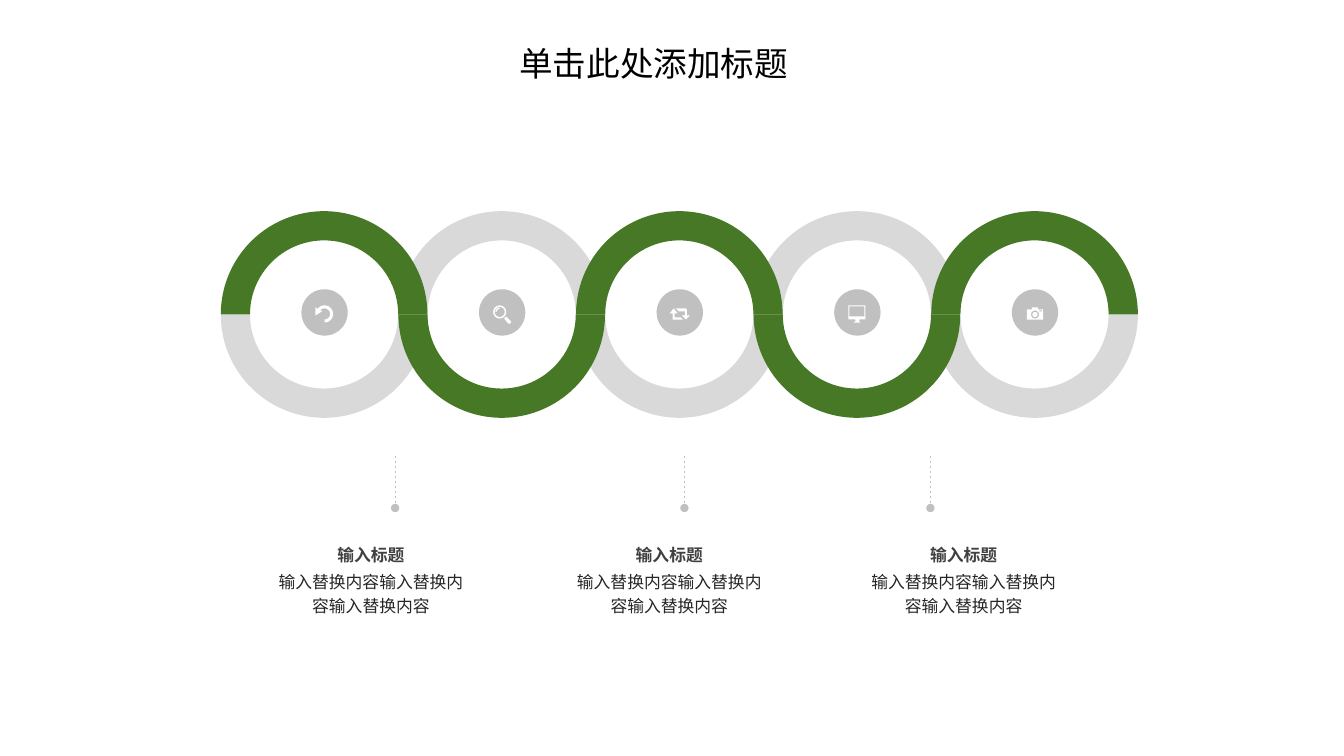
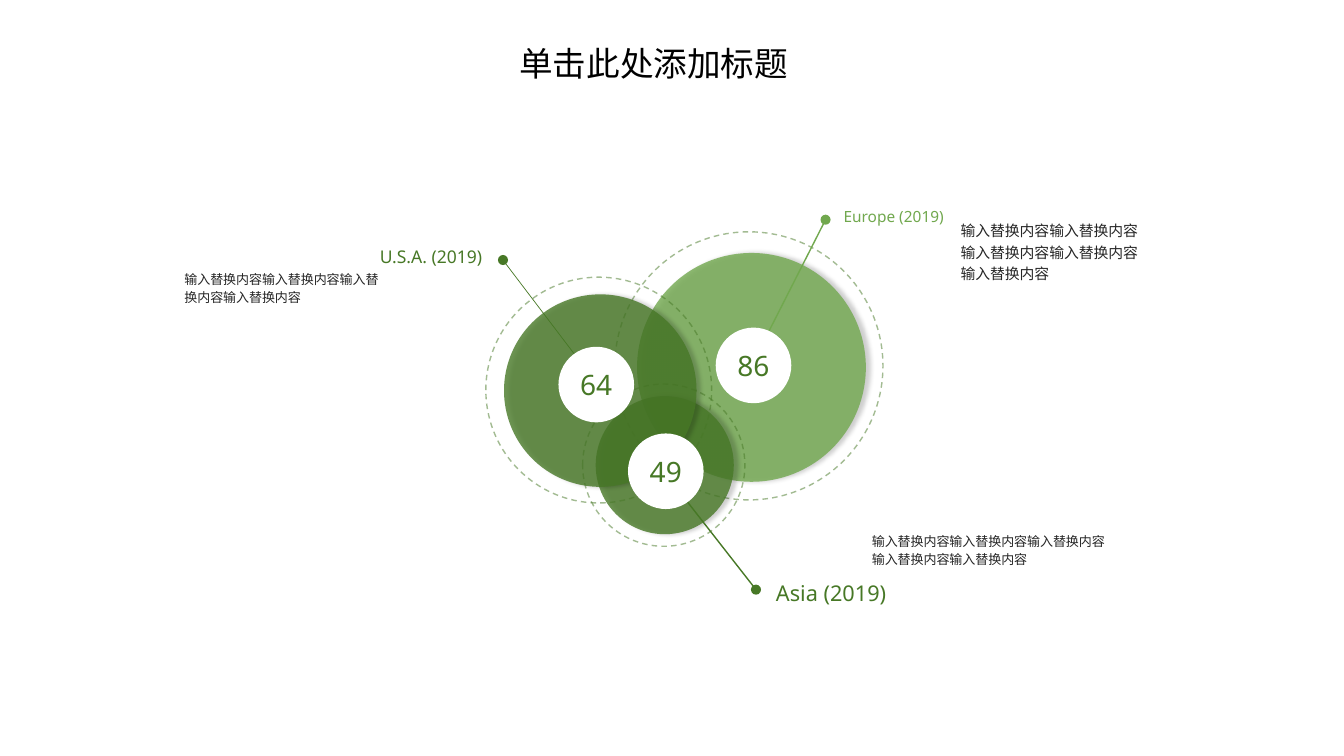
from dataclasses import dataclass
from math import cos, radians, sin
from typing import Optional

from pptx import Presentation
from pptx.dml.color import RGBColor
from pptx.enum.dml import MSO_LINE
from pptx.enum.shapes import MSO_CONNECTOR, MSO_SHAPE
from pptx.enum.text import MSO_ANCHOR as Anchor, MSO_AUTO_SIZE as AutoSize, PP_ALIGN as Align
from pptx.oxml import parse_xml
from pptx.oxml.ns import nsdecls, qn
from pptx.util import Emu, Inches, Pt

FONT = "Noto Sans"
BLACK = RGBColor(0x00, 0x00, 0x00)
HEADING = RGBColor(0x40, 0x40, 0x40)
BODY = RGBColor(0x26, 0x26, 0x26)
WHITE = RGBColor(0xFF, 0xFF, 0xFF)
SILVER = RGBColor(0xC0, 0xC0, 0xC0)
PALE = RGBColor(0xD9, 0xD9, 0xD9)
GREEN = RGBColor(0x47, 0x78, 0x26)
LIGHT_GREEN = RGBColor(0x71, 0xA8, 0x4E)

# All lengths count cells of a square grid, 133.33 columns by 75 rows.
COLUMNS, ROWS = 133.33, 75
PHRASE = "输入替换内容"
Point = tuple[float, float]
Contour = list[Point]


@dataclass(frozen=True)
class Area:
    left: float
    top: float
    width: float
    height: float


@dataclass(frozen=True)
class Circle:
    x: float
    y: float
    size: float

    @property
    def area(self) -> Area:
        return Area(self.x - self.size / 2, self.y - self.size / 2, self.size, self.size)


@dataclass(frozen=True)
class Line:
    text: str
    size: float
    color: RGBColor
    bold: bool = False
    align: Align = Align.LEFT
    spacing: Optional[float] = None
    before: float = 0


@dataclass(frozen=True)
class Bubble:
    disc: Circle
    ring: Circle
    color: RGBColor


@dataclass(frozen=True)
class Callout:
    dot: Point
    target: Point
    weight: float
    color: RGBColor
    label: Line
    label_left: float
    label_top: float


def cells(count: float) -> Emu:
    return Inches(count / 10)


def frame(area: Area) -> list[Emu]:
    return [cells(n) for n in (area.left, area.top, area.width, area.height)]


def apply(target, values: dict) -> None:
    for name, value in values.items():
        setattr(target, name, value)


def a_tag(tag: str, attributes: str = "", inner: str = ""):
    return parse_xml(f"<a:{tag} {nsdecls('a')} {attributes}>{inner}</a:{tag}>")


def set_opacity(properties, percent: int) -> None:
    color = next(properties.iter(qn("a:srgbClr")))
    color.append(a_tag("alpha", f'val="{percent * 1000}"'))


def write(box, lines: list[Line], **layout) -> None:
    text = box.text_frame
    apply(text, {"word_wrap": True, **layout})
    for index, line in enumerate(lines):
        para = text.add_paragraph() if index else text.paragraphs[0]
        para.alignment = line.align
        if line.spacing:
            para.line_spacing = line.spacing
        if index and line.before:
            para.space_before = Pt(line.before)
        span = para.add_run()
        span.text = line.text
        apply(span.font, {"name": FONT, "size": Pt(line.size), "bold": line.bold})
        span.font.color.rgb = line.color
        span.font._element.append(a_tag("ea", f'typeface="{FONT}"'))


def add_text(page, area: Area, lines: list[Line], inset: Optional[Point] = None, **layout) -> None:
    box = page.shapes.add_textbox(*frame(area))
    if inset:
        across, down = map(cells, inset)
        layout |= {"margin_left": across, "margin_right": across,
                   "margin_top": down, "margin_bottom": down}
    write(box, lines, **layout)


def paint(shape, color: RGBColor):
    shape.shadow.inherit = False
    shape.fill.solid()
    shape.fill.fore_color.rgb = color
    shape.line.fill.background()
    return shape


def add_disc(page, circle: Circle, color: RGBColor):
    return paint(page.shapes.add_shape(MSO_SHAPE.OVAL, *frame(circle.area)), color)


def add_half_ring(page, circle: Circle, band: float, upper: bool, color: RGBColor) -> None:
    arc = paint(page.shapes.add_shape(MSO_SHAPE.BLOCK_ARC, *frame(circle.area)), color)
    half_turn = 108  # 180 degrees in adjustment units
    angles = (half_turn, 0) if upper else (0, half_turn)
    for index, value in enumerate((*angles, band / circle.size)):
        arc.adjustments[index] = value


def add_line(page, start: Point, end: Point, color: RGBColor, weight: float):
    ends = [cells(n) for n in (*start, *end)]
    line = page.shapes.add_connector(MSO_CONNECTOR.STRAIGHT, *ends)
    apply(line.line, {"width": Pt(weight)})
    line.line.color.rgb = color
    line.element.spPr.append(a_tag("effectLst"))
    return line


def arc_points(x: float, y: float, radius: float, start: int = 0, end: int = 360) -> Contour:
    steps = 24
    turns = [radians(start + (end - start) * step / steps) for step in range(steps + 1)]
    return [(x + radius * cos(turn), y + radius * sin(turn)) for turn in turns]


def band_points(x: float, y: float, outer: float, inner: float, start: int, end: int) -> Contour:
    return arc_points(x, y, outer, start, end) + arc_points(x, y, inner, end, start)


def box_points(left: float, top: float, right: float, bottom: float) -> Contour:
    return [(left, top), (right, top), (right, bottom), (left, bottom)]


# Icon outlines in tenths of a cell, measured from the centre of the disc.
UNDO = [band_points(0, 1.5, 8.5, 5.5, -140, 90), [(-9, -5), (-9, 3), (-2.5, -1)]]
SEARCH = [arc_points(-2.5, -0.5, 6.5), arc_points(-2.5, -0.5, 5),
          band_points(-2.5, -0.5, 4.2, 3, 180, 270),
          [(4, 4), (2, 6), (6, 11), (8, 11), (9, 9), (8, 8)]]
REPEAT = [[(-4, -4), (6, -4), (7, -3), (7, 3), (10, 3), (6, 7), (2, 3), (5, 3), (5, -1), (-1, -1)],
          [(-6, -4), (-2, 1), (-5, 1), (-5, 5), (1, 5), (3, 7), (-7, 7), (-7, 1), (-10, 1)]]
MONITOR = [box_points(-9, -7, 8, 7), box_points(-8, -6, 7, 4),
           [(-2, 7), (2, 7), (2, 9), (3, 10), (-4, 10), (-2, 9)]]
CAMERA = [[(-8, -3), (-3, -3), (-3, -5), (3, -5), (3, -3), (8, -3), (8, 7), (-8, 7)],
          arc_points(0, 2, 4), arc_points(0, 2, 2.5), box_points(4, -2, 7, -1)]


def add_icon(page, x: float, y: float, contours: list[Contour]) -> None:
    unit = cells(0.1)
    scaled = [[(px * unit, py * unit) for px, py in contour] for contour in contours]
    outline = page.shapes.build_freeform(*scaled[0][0])
    for index, contour in enumerate(scaled):
        if index:
            outline.move_to(*contour[0])
        outline.add_line_segments(contour[1:], close=True)
    paint(outline.convert_to_shape(cells(x), cells(y)), WHITE)


def add_page(deck):
    """Add a blank slide carrying the shared title."""
    page = deck.slides.add_slide(deck.slide_layouts[6])
    add_text(page, Area(39.2, 2.8, 51.3, 7),
             [Line("单击此处添加标题", 24, BLACK, align=Align.CENTER)],
             vertical_anchor=Anchor.MIDDLE)
    return page


def build_wave(deck) -> None:
    page = add_page(deck)
    first, pitch, middle = 32.15, 17.62, 31.2
    size, band = 20.5, 2.9
    icons = [UNDO, SEARCH, REPEAT, MONITOR, CAMERA]
    rings = [Circle(first + pitch * index, middle, size) for index in range(len(icons))]
    for color, flip in ((PALE, 1), (GREEN, 0)):
        for index, ring in enumerate(rings):
            add_half_ring(page, ring, band, index % 2 == flip, color)
    for ring, icon in zip(rings, icons):
        add_disc(page, Circle(ring.x + 0.05, 31, 4.6), SILVER)
        add_icon(page, ring.x + 0.05, 31, icon)

    for x in (39.2, 67.9, 92.3):
        pointer = add_line(page, (x, 45.2), (x, 50.4), SILVER, 0.5)
        pointer.line.dash_style = MSO_LINE.DASH
        pointer.element.spPr.find(qn("a:ln")).append(a_tag("tailEnd", 'type="oval"'))

    shared = {"align": Align.CENTER, "spacing": 1.2, "before": 2}
    lines = [Line("输入标题", 12, HEADING, bold=True, **shared),
             Line(PHRASE * 3, 12, BODY, **shared)]
    for left in (25.4, 55, 84.2):
        add_text(page, Area(left, 52.8, 22.8, 9.2), lines, inset=(1.6, 0.8),
                 auto_size=AutoSize.SHAPE_TO_FIT_TEXT)


def add_bubble(page, bubble: Bubble) -> None:
    disc = add_disc(page, bubble.disc, bubble.color)
    properties = disc.element.spPr
    set_opacity(properties.find(qn("a:solidFill")), 80)
    shade = '<a:srgbClr val="000000"><a:alpha val="23000"/></a:srgbClr>'
    distance = Pt(3)
    properties.find(qn("a:effectLst")).append(a_tag(
        "outerShdw", f'blurRad="{distance}" dist="{distance}" dir="0" rotWithShape="0"', shade))
    ring = page.shapes.add_shape(MSO_SHAPE.OVAL, *frame(bubble.ring.area))
    ring.shadow.inherit = False
    ring.fill.background()
    ring.line.color.rgb = GREEN
    apply(ring.line, {"width": Pt(1), "dash_style": MSO_LINE.DASH})
    set_opacity(ring.element.spPr.find(qn("a:ln")), 50)


def add_callout(page, callout: Callout) -> None:
    add_line(page, callout.dot, callout.target, callout.color, callout.weight)
    add_disc(page, Circle(*callout.dot, 1), callout.color)
    add_text(page, Area(callout.label_left, callout.label_top, 13.4, 3.5), [callout.label])


def build_bubbles(deck) -> None:
    page = add_page(deck)
    bubbles = [
        Bubble(Circle(74.55, 36.45, 22.7), Circle(74.3, 36.3, 26.6), LIGHT_GREEN),
        Bubble(Circle(65.95, 46.15, 13.7), Circle(65.85, 46.15, 16.1), GREEN),
        Bubble(Circle(59.55, 38.75, 19.1), Circle(59.4, 38.7, 22.4), GREEN),
    ]
    callouts = [
        Callout((81.9, 21.8), (75.5, 34.4), 1, LIGHT_GREEN,
                Line("Europe (2019)", 11, LIGHT_GREEN), 82.7, 20.1),
        Callout((49.9, 25.8), (58.1, 36.6), 0.5, GREEN,
                Line("U.S.A. (2019)", 12.5, GREEN, align=Align.RIGHT), 35.4, 23.9),
        Callout((75, 58.5), (66.8, 48), 1, GREEN,
                Line("Asia (2019)", 15.5, GREEN), 76, 57),
    ]
    notes = [
        (Area(18.3, 23.9, 19.4, 9.1), 4, 9.3),
        (Area(95.3, 20.3, 19, 9.1), 5, 10.6),
        (Area(86.5, 49.9, 23.3, 9.1), 5, 9.3),
    ]
    values = [("86", 74.75, 36.25), ("64", 59.15, 38.15), ("49", 66.05, 46.75)]

    for bubble in bubbles:
        add_bubble(page, bubble)
    for callout in callouts:
        add_callout(page, callout)
    for area, repeats, size in notes:
        add_text(page, area, [Line(PHRASE * repeats, size, BODY, spacing=1.2)],
                 inset=(0, 0), vertical_anchor=Anchor.MIDDLE)
    for text, x, y in values:
        disc = add_disc(page, Circle(x, y, 7.5), WHITE)
        write(disc, [Line(text, 20, GREEN, align=Align.CENTER)], vertical_anchor=Anchor.MIDDLE)


def main() -> None:
    deck = Presentation()
    apply(deck, {"slide_width": cells(COLUMNS), "slide_height": cells(ROWS)})
    build_wave(deck)
    build_bubbles(deck)
    deck.save("out.pptx")


if __name__ == "__main__":
    main()
